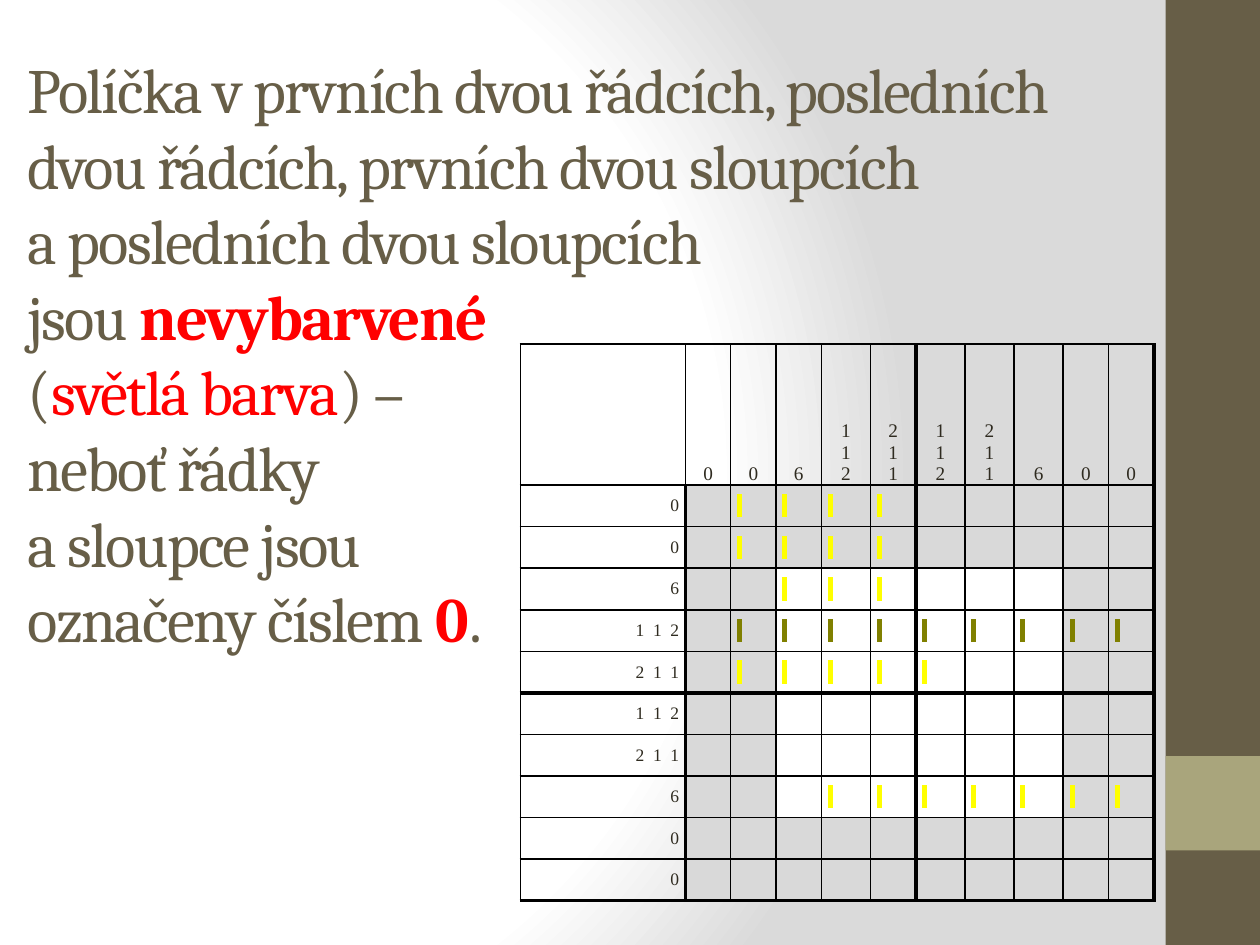
from lxml import etree
from pptx import Presentation
from pptx.dml.color import RGBColor
from pptx.enum.shapes import MSO_SHAPE
from pptx.enum.text import MSO_ANCHOR, PP_ALIGN
from pptx.oxml import parse_xml
from pptx.oxml.ns import qn
from pptx.util import Inches, Pt

RECTANGLE = MSO_SHAPE.RECTANGLE
BOTTOM, MIDDLE = MSO_ANCHOR.BOTTOM, MSO_ANCHOR.MIDDLE
CENTER, RIGHT, LEFT = PP_ALIGN.CENTER, PP_ALIGN.RIGHT, PP_ALIGN.LEFT

COLORS = {
    "brown": "675E47", "sand": "A9A57C", "red": "FF0000", "ink": "2F2B20",
    "gray": "D9D9D9", "white": "FFFFFF", "edge": "DADADA", "black": "000000",
    "yellow": "FFFF00", "olive": "808000",
}
NAMESPACE = 'xmlns:a="http://schemas.openxmlformats.org/drawingml/2006/main"'


def color(name):
    return RGBColor.from_string(COLORS[name])


def write_cell(cell, lines, size, alignment, anchor):
    cell.margin_left = cell.margin_right = Inches(0.05)
    cell.margin_top = cell.margin_bottom = 0
    cell.vertical_anchor = anchor
    for number, line in enumerate(lines):
        frame = cell.text_frame
        paragraph = frame.add_paragraph() if number else frame.paragraphs[0]
        paragraph.alignment = alignment
        paragraph.font.size = Pt(size)
        paragraph.font.name = "Times New Roman"
        paragraph.font.color.rgb = color("ink")
        if line:
            run = paragraph.add_run()
            run.text = line
            run.font.size = Pt(size)


presentation = Presentation()
presentation.slide_width, presentation.slide_height = Inches(10), Inches(7.5)
width, height = presentation.slide_width, presentation.slide_height
slide = presentation.slides.add_slide(presentation.slide_layouts[6])

# Background: round gradient, white to light gray
slide.background.fill.solid()
background = slide.element.find(".//" + qn("p:bgPr"))
stops = "".join(
    f'<a:gs pos="{share * 1000}"><a:srgbClr val="{COLORS[name]}"/></a:gs>'
    for share, name in ((0, "white"), (75, "white"), (100, "edge")))
background.replace(background[0], parse_xml(
    f'<a:gradFill {NAMESPACE} rotWithShape="1"><a:gsLst>{stops}</a:gsLst>'
    '<a:path path="circle"><a:fillToRect l="20000" t="50000" r="100000" b="50000"/>'
    '</a:path></a:gradFill>'))

# Side band and its accent square
for top, share, name in ((0, 1, "brown"), (0.8, 0.1, "sand")):
    band = slide.shapes.add_shape(RECTANGLE, int(width * 0.925), int(height * top),
                                  int(width * 0.075), int(height * share))
    band.shadow.inherit = False
    band.fill.solid()
    band.fill.fore_color.rgb = color(name)
    band.line.fill.background()

# Explanation
title = slide.shapes.add_textbox(Inches(0.12), 0, Inches(9.05), int(height * 0.7))
frame = title.text_frame
frame.word_wrap = True
frame.vertical_anchor = BOTTOM
paragraph = frame.paragraphs[0]
title_lines = [
    [("Políčka v prvních dvou řádcích, posledních dvou řádcích, prvních dvou sloupcích",
      "brown", False)],
    [("a posledních dvou sloupcích", "brown", False)],
    [("jsou ", "brown", False), ("nevybarvené", "red", True)],
    [("(", "brown", False), ("světlá barva", "red", False), (") –", "brown", False)],
    [("neboť řádky", "brown", False)],
    [("a sloupce jsou", "brown", False)],
    [("označeny číslem ", "brown", False), ("0", "red", True), (".", "brown", False)],
]
for number, line in enumerate(title_lines):
    if number:
        paragraph.add_line_break()
    for text, name, bold in line:
        run = paragraph.add_run()
        run.text = text
        run.font.name = "Cambria"
        run.font.size = Pt(36)
        run.font.bold = bold
        run.font.color.rgb = color(name)
        run.font._element.set("spc", "-100")

# Puzzle table: clues above and at the left
column_clues = ["0", "0", "6", "112", "211", "112", "211", "6", "0", "0"]
row_clues = ["0", "0", "6", "1  1  2", "2  1  1", "1  1  2", "2  1  1", "6", "0", "0"]
column_widths = [1.31, 0.36, 0.36, 0.36, 0.39, 0.36, 0.39, 0.39, 0.39, 0.36, 0.36]
row_heights = [1.12] + [0.33] * 10
# Row: first and last marked column, colour of the marks
marks = {1: (2, 5, "yellow"), 2: (2, 5, "yellow"), 3: (3, 5, "yellow"),
         4: (2, 10, "olive"), 5: (2, 6, "yellow"), 8: (4, 10, "yellow")}
HEAVY = {6: 2.25, 11: 2.25}  # grid lines in the middle and at the end

graphic = slide.shapes.add_table(11, 11, Inches(4.13), Inches(2.73),
                                 Inches(sum(column_widths)), Inches(sum(row_heights)))
table = graphic.table
table.first_row = table.horz_banding = False
for column, size in zip(table.columns, column_widths):
    column.width = Inches(size)
for row, size in zip(table.rows, row_heights):
    row.height = Inches(size)

for r in range(11):
    for c in range(11):
        cell = table.cell(r, c)
        vertical = {**HEAVY, 1: 1.5 if r else 1}
        horizontal = {**HEAVY, 1: 1.5 if c else 1}
        borders = {"L": vertical.get(c, 1), "R": vertical.get(c + 1, 1),
                   "T": horizontal.get(r, 1), "B": horizontal.get(r + 1, 1)}
        properties = cell._tc.get_or_add_tcPr()
        for side, points in borders.items():
            properties.append(parse_xml(
                f'<a:ln{side} {NAMESPACE} w="{Pt(points)}"><a:solidFill>'
                f'<a:srgbClr val="{COLORS["black"]}"/></a:solidFill></a:ln{side}>'))

        if r and c:
            inside = 3 <= r <= 8 and 3 <= c <= 8
            cell.fill.solid()
            cell.fill.fore_color.rgb = color("white" if inside else "gray")
            first, last, mark = marks.get(r, (1, 0, None))
            marked = first <= c <= last
            write_cell(cell, [" " if marked else ""], 12, LEFT, MIDDLE)
            if marked:
                run = cell.text_frame.paragraphs[0].runs[0]
                highlight = etree.SubElement(run.font._element, qn("a:highlight"))
                etree.SubElement(highlight, qn("a:srgbClr"), val=COLORS[mark])
                run.font.name = "Times New Roman"
        else:
            cell.fill.background()
            if r:
                write_cell(cell, [row_clues[r - 1]], 10, RIGHT, MIDDLE)
            elif c:
                write_cell(cell, column_clues[c - 1], 11, CENTER, BOTTOM)

presentation.save("out.pptx")
